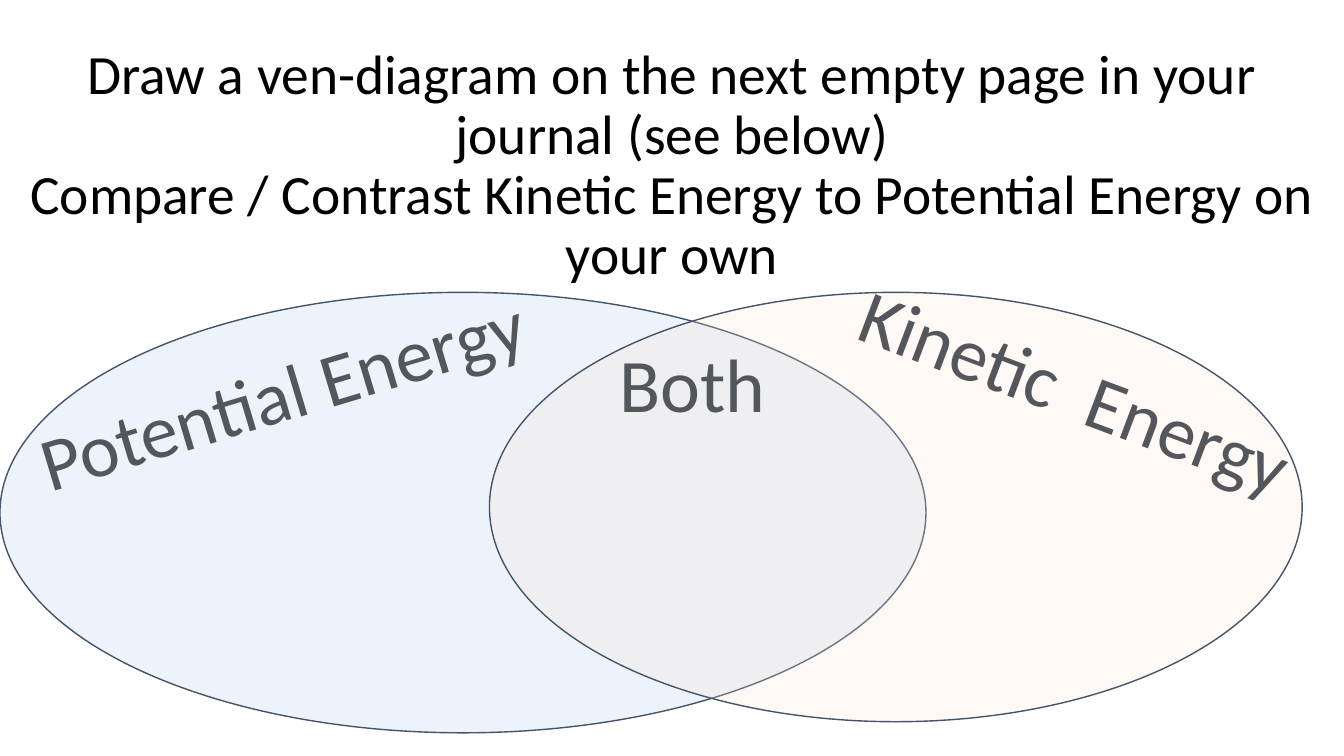
from pptx import Presentation
from pptx.dml.color import RGBColor as Color
from pptx.enum.shapes import MSO_SHAPE as Shape
from pptx.enum.text import MSO_ANCHOR as Anchor, MSO_AUTO_SIZE as AutoSize, PP_ALIGN as Align
from pptx.oxml.ns import qn
from pptx.util import Inches, Pt
from lxml.etree import SubElement

WIDTH, HEIGHT = 13.33, 7.5
COLORS = {
    "title": "000000",
    "label": "53575C",
    "label end": "C5C7CA",
    "outline": "44546A",
    "potential": "DEEBF7",
    "kinetic": "FBE5D6",
}
TITLE_LINES = [
    "Draw a ven-diagram on the next empty page in your journal (see below)",
    "Compare / Contrast Kinetic Energy to Potential Energy on your own",
]
TITLE_FORMAT = {"name": "Calibri", "size": Pt(39.6)}
LABEL_FORMAT = {"name": "Calibri", "size": Pt(54)}
TITLE_FRAME = {"word_wrap": True, "vertical_anchor": Anchor.MIDDLE}
LABEL_FRAME = {"word_wrap": False, "auto_size": AutoSize.SHAPE_TO_FIT_TEXT}
LABEL_STOPS = [("label", 0.21), ("label end", 0.88)]
TITLE_PLACE = (0, 5.33, 100, 33.33)
CIRCLES = [
    ("potential", (0, 38.67, 68.9, 58.27), 56),
    ("kinetic", (36.42, 38.67, 60.47, 56.8), 22),
]
LABELS = [
    ("Potential Energy", (1.2, 45.07, 39.68, 14.53), 343.3),
    ("Kinetic  Energy", (60.13, 44.8, 39.68, 14.53), 20.6),
    ("Both", (45.24, 43.87, 12.53, 13.47), 0),
]


def percent(place):
    sides = (WIDTH, HEIGHT, WIDTH, HEIGHT)
    return [Inches(side * share / 100) for side, share in zip(sides, place)]


def set_values(target, values):
    for name, value in values.items():
        setattr(target, name, value)


def add_text(page, place, lines, font_format, frame_format):
    box = page.shapes.add_textbox(*percent(place))
    set_values(box.text_frame, frame_format)
    para = box.text_frame.paragraphs[0]
    para.alignment = Align.CENTER
    for index, line in enumerate(lines):
        if index:
            para.add_line_break()
        span = para.add_run()
        span.text = line
        set_values(span.font, font_format)
    return box, para


def add_title(page):
    box, para = add_text(page, TITLE_PLACE, TITLE_LINES, TITLE_FORMAT, TITLE_FRAME)
    para.line_spacing = 0.9
    for span in para.runs:
        span.font.color.rgb = Color.from_string(COLORS["title"])


def add_circle(page, color, place, opacity):
    circle = page.shapes.add_shape(Shape.OVAL, *percent(place))
    circle.shadow.inherit = False
    circle.fill.solid()
    circle.fill.fore_color.rgb = Color.from_string(COLORS[color])
    tint = circle.fill._xPr.find(qn("a:solidFill"))[0]
    SubElement(tint, qn("a:alpha"), val=str(opacity * 1000))
    circle.line.color.rgb = Color.from_string(COLORS["outline"])
    circle.line.width = Pt(1)


def add_label(page, text, place, angle):
    box, para = add_text(page, place, [text], LABEL_FORMAT, LABEL_FRAME)
    box.rotation = angle
    fill = para.runs[0].font.fill
    fill.gradient()
    fill.gradient_angle = 270
    for stop, (color, position) in zip(fill.gradient_stops, LABEL_STOPS):
        stop.color.rgb = Color.from_string(COLORS[color])
        stop.position = position


def main():
    deck = Presentation()
    deck.slide_width, deck.slide_height = Inches(WIDTH), Inches(HEIGHT)
    page = deck.slides.add_slide(deck.slide_layouts[6])
    add_title(page)
    for circle in CIRCLES:
        add_circle(page, *circle)
    for label in LABELS:
        add_label(page, *label)
    deck.save("out.pptx")


if __name__ == "__main__":
    main()
